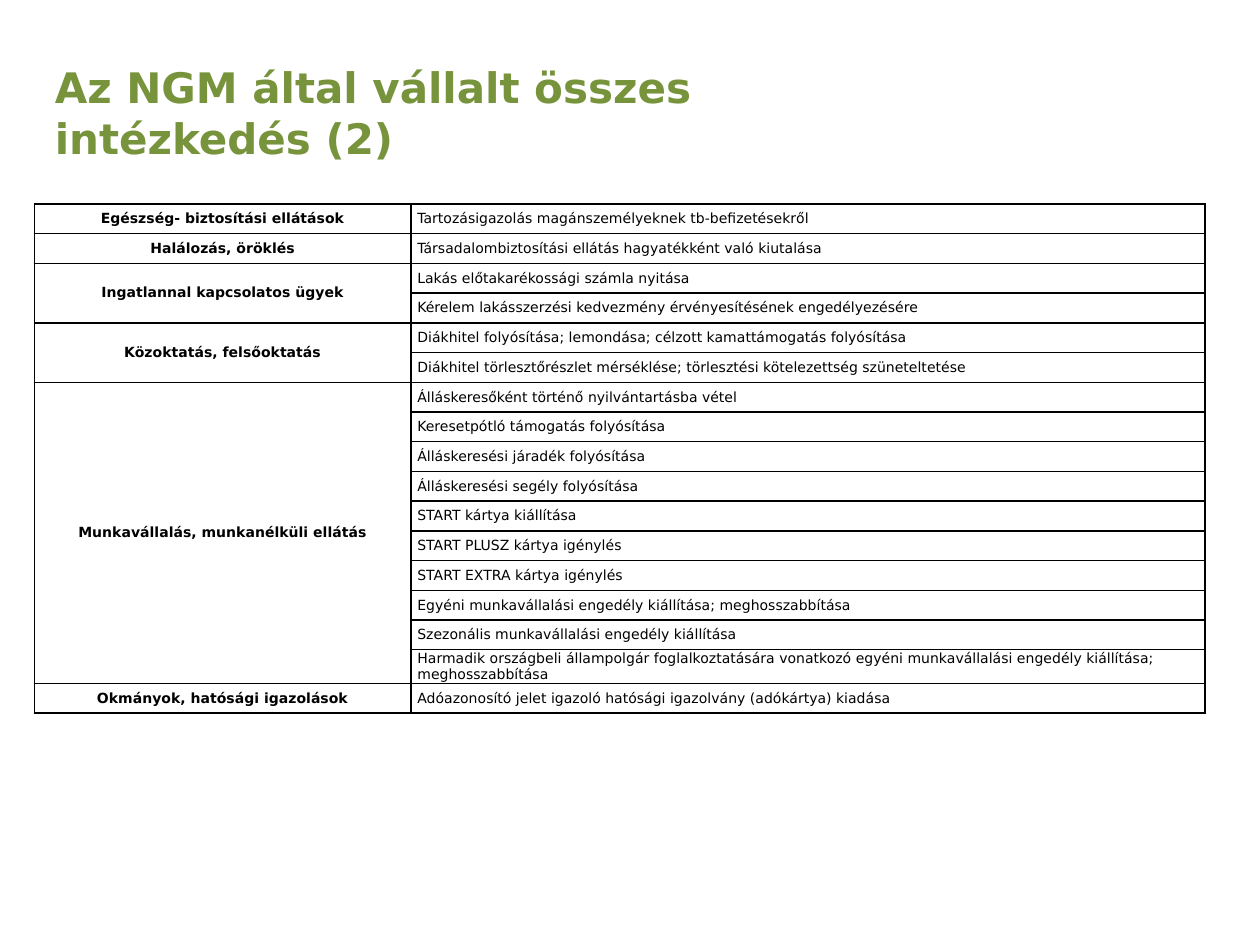
"""Build the slide listing all the measures taken on by NGM, grouped by field."""
from lxml.etree import SubElement
from pptx import Presentation
from pptx.dml.color import RGBColor
from pptx.enum.text import MSO_ANCHOR, PP_ALIGN
from pptx.oxml.ns import qn
from pptx.util import Pt

TITLE = "Az NGM által vállalt összes intézkedés (2)"
GROUPS = [
    ("Egészség- biztosítási ellátások", [
        "Tartozásigazolás magánszemélyeknek tb-befizetésekről",
    ]),
    ("Halálozás, öröklés", [
        "Társadalombiztosítási ellátás hagyatékként való kiutalása",
    ]),
    ("Ingatlannal kapcsolatos ügyek", [
        "Lakás előtakarékossági számla nyitása",
        "Kérelem lakásszerzési kedvezmény érvényesítésének engedélyezésére",
    ]),
    ("Közoktatás, felsőoktatás", [
        "Diákhitel folyósítása; lemondása; célzott kamattámogatás folyósítása",
        "Diákhitel törlesztőrészlet mérséklése; törlesztési kötelezettség szüneteltetése",
    ]),
    ("Munkavállalás, munkanélküli ellátás", [
        "Álláskeresőként történő nyilvántartásba vétel",
        "Keresetpótló támogatás folyósítása",
        "Álláskeresési járadék folyósítása",
        "Álláskeresési segély folyósítása",
        "START kártya kiállítása",
        "START PLUSZ kártya igénylés",
        "START EXTRA kártya igénylés",
        "Egyéni munkavállalási engedély kiállítása; meghosszabbítása",
        "Szezonális munkavállalási engedély kiállítása",
        "Harmadik országbeli állampolgár foglalkoztatására vonatkozó egyéni "
        "munkavállalási engedély kiállítása; meghosszabbítása",
    ]),
    ("Okmányok, hatósági igazolások", [
        "Adóazonosító jelet igazoló hatósági igazolvány (adókártya) kiadása",
    ]),
]
FONT = "DejaVu Sans"
GREEN = RGBColor(0x77, 0x93, 0x3C)
BLACK = RGBColor(0, 0, 0)
COLS = [215.3, 453.6]
ROW = 17


def write(frame, text, size=8, color=BLACK, bold=False, align=PP_ALIGN.LEFT):
    frame.word_wrap = True
    para = frame.paragraphs[0]
    para.alignment = align
    run = para.add_run()
    run.text = text
    font = run.font
    font.name, font.size, font.bold = FONT, Pt(size), bold
    font.color.rgb = color


def style(cell):
    cell.vertical_anchor = MSO_ANCHOR.MIDDLE
    cell.margin_left = cell.margin_right = Pt(3.6)
    cell.margin_top = cell.margin_bottom = Pt(0)
    props = cell._tc.get_or_add_tcPr()
    for side in ("a:lnL", "a:lnR", "a:lnT", "a:lnB"):
        line = SubElement(props, qn(side), w=str(Pt(1)))
        fill = SubElement(line, qn("a:solidFill"))
        SubElement(fill, qn("a:srgbClr"), val=str(BLACK))
    cell.fill.background()


def main():
    deck = Presentation()
    deck.slide_width, deck.slide_height = Pt(720), Pt(540)
    shapes = deck.slides.add_slide(deck.slide_layouts[6]).shapes

    title = shapes.add_textbox(Pt(-2.9), Pt(31.7), Pt(442), Pt(33.8)).text_frame
    title.margin_left = Pt(34.2)
    write(title, TITLE, size=24, color=GREEN, bold=True)

    count = sum(len(items) for _, items in GROUPS)
    table = shapes.add_table(count, 2, Pt(19.6), Pt(116.6),
                             Pt(sum(COLS)), Pt(count * ROW)).table
    table.first_row = table.horz_banding = False
    for col, width in zip(table.columns, COLS):
        col.width = Pt(width)
    for row in table.rows:
        row.height = Pt(ROW)
        for cell in row.cells:
            style(cell)

    top = 0
    for name, items in GROUPS:
        head = table.cell(top, 0)
        if len(items) > 1:
            head.merge(table.cell(top + len(items) - 1, 0))
        write(head.text_frame, name, bold=True, align=PP_ALIGN.CENTER)
        for row, item in enumerate(items, top):
            write(table.cell(row, 1).text_frame, item)
        top += len(items)

    deck.save("out.pptx")


if __name__ == "__main__":
    main()
